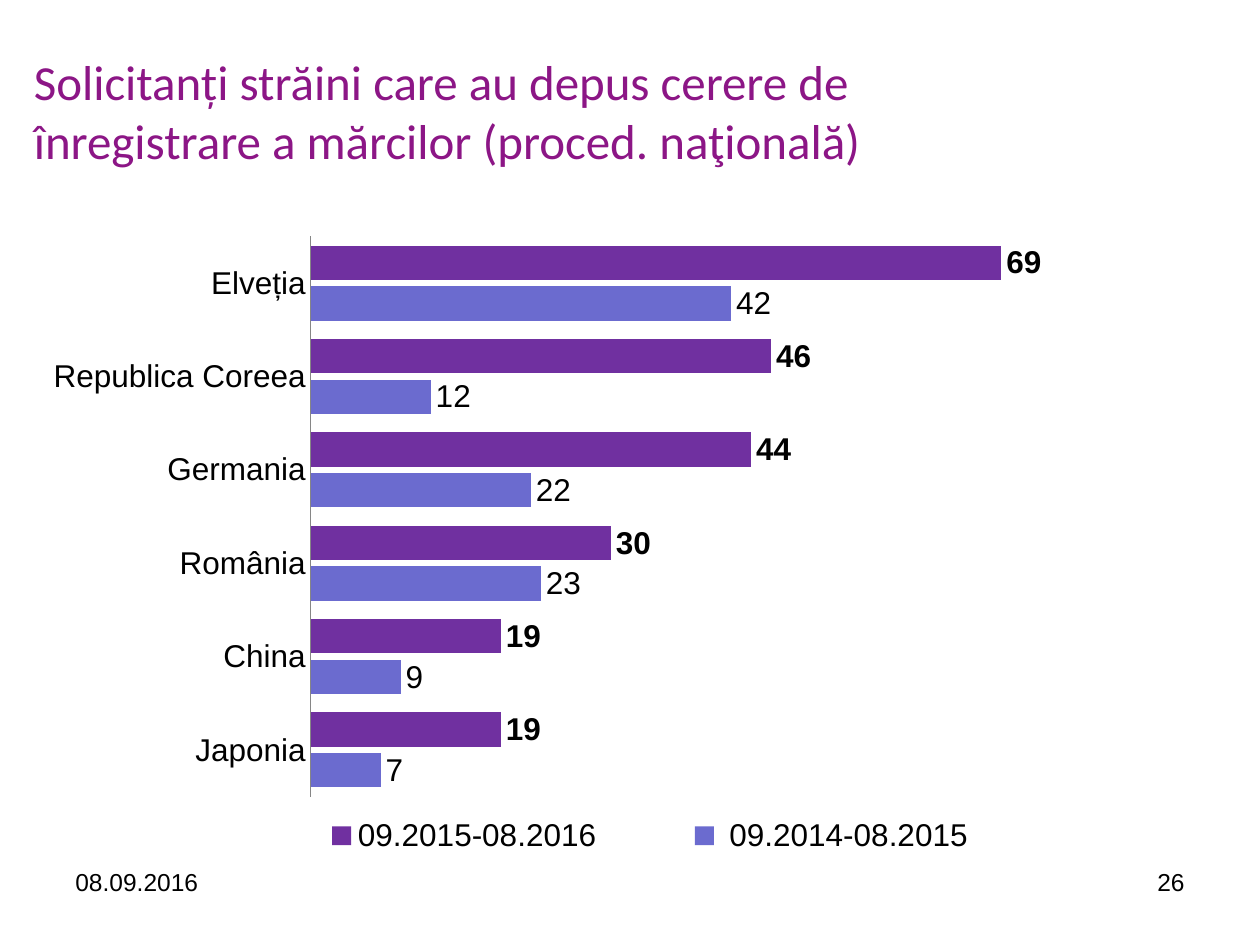
import pptx
import pptx.chart.data
import pptx.dml.color
import pptx.enum.chart
import pptx.enum.text
import pptx.oxml
import pptx.oxml.ns
import pptx.util

Inches = pptx.util.Inches
ALIGN = pptx.enum.text.PP_ALIGN
ANCHOR = pptx.enum.text.MSO_ANCHOR
CHART = pptx.enum.chart

CATS = ["Japonia", "China", "România", "Germania", "Republica Coreea", "Elveția"]
# Name, values, bar colour, bold labels
SERIES = [
    (" 09.2014-08.2015", [7, 9, 23, 22, 12, 42], "6B6BCF", False),
    ("09.2015-08.2016", [19, 19, 30, 44, 46, 69], "7030A0", True),
]


def color(code):
    return pptx.dml.color.RGBColor.from_string(code)


def style(font, name, size, code, bold=False):
    font.name = name
    font.size = pptx.util.Pt(size)
    font.bold = bold
    font.color.rgb = color(code)


def add_text(slide, box, text, name, size, code, align=ALIGN.LEFT, anchor=ANCHOR.TOP):
    frame = slide.shapes.add_textbox(*map(Inches, box)).text_frame
    frame.word_wrap = True
    frame.vertical_anchor = anchor
    frame.text = text
    para = frame.paragraphs[0]
    para.alignment = align
    style(para.runs[0].font, name, size, code)


def set_place(parent, index, box, inner=False):
    """Fix a chart part at fractions of the chart's size."""
    for old in parent.findall(pptx.oxml.ns.qn("c:layout")):
        parent.remove(old)
    target = '<c:layoutTarget val="inner"/>' if inner else ""
    modes = '<c:xMode val="edge"/><c:yMode val="edge"/>'
    sizes = "".join(f'<c:{key} val="{val}"/>' for key, val in zip("xywh", box))
    parent.insert(index, pptx.oxml.parse_xml(
        f'<c:layout {pptx.oxml.ns.nsdecls("c")}><c:manualLayout>'
        f"{target}{modes}{sizes}</c:manualLayout></c:layout>"))


def add_bars(slide, box):
    data = pptx.chart.data.CategoryChartData()
    data.categories = CATS
    for name, vals, _, _ in SERIES:
        data.add_series(name, vals)
    chart = slide.shapes.add_chart(
        CHART.XL_CHART_TYPE.BAR_CLUSTERED, *map(Inches, box), data).chart
    chart.has_title = False
    style(chart.font, "Arial", 18, "000000")

    # Axes
    axis = chart.category_axis
    axis.major_tick_mark = CHART.XL_TICK_MARK.NONE
    axis.format.line.color.rgb = color("868686")
    scale = chart.value_axis
    scale.minimum_scale, scale.maximum_scale = 0, 80
    scale.has_major_gridlines = False
    scale.visible = False

    # Bars and value labels
    plot = chart.plots[0]
    plot.gap_width, plot.overlap = 54, -19
    plot.vary_by_categories = False
    for bars, (_, _, code, bold) in zip(plot.series, SERIES):
        bars.format.fill.solid()
        bars.format.fill.fore_color.rgb = color(code)
        labels = bars.data_labels
        labels.show_value = True
        labels.position = CHART.XL_LABEL_POSITION.OUTSIDE_END
        style(labels.font, "Arial", 18, "000000", bold)

    # Legend below the plot
    chart.has_legend = True
    legend = chart.legend
    legend.position = CHART.XL_LEGEND_POSITION.TOP
    legend.include_in_layout = False
    style(legend.font, "Arial", 18, "000000")
    set_place(legend._element, 1, (0.2, 0.92, 0.73, 0.08))
    area = chart._chartSpace.chart.plotArea
    set_place(area, 0, (0.26, 0.04, 0.72, 0.86), inner=True)


def add_footer(slide, box, date, number):
    left, top, width, height = box
    part = 2.33
    add_text(slide, (left, top, part, height), date, "Arial", 14, "000000")
    add_text(slide, (left + width - part, top, part, height), number,
             "Arial", 14, "000000", ALIGN.RIGHT)


def main():
    deck = pptx.Presentation()
    deck.slide_width, deck.slide_height = Inches(10), Inches(7.5)
    slide = deck.slides.add_slide(deck.slide_layouts[6])
    add_footer(slide, (0.5, 6.83, 9, 0.52), "08.09.2016", "26")
    add_text(slide, (0.17, 0.25, 8.17, 1.25),
             "Solicitanți străini care au depus cerere de înregistrare a "
             "mărcilor (proced. naţională)",
             "Calibri", 28, "8C1686", anchor=ANCHOR.MIDDLE)
    add_bars(slide, (0.17, 1.67, 8.83, 5.17))
    deck.save("out.pptx")


if __name__ == "__main__":
    main()
